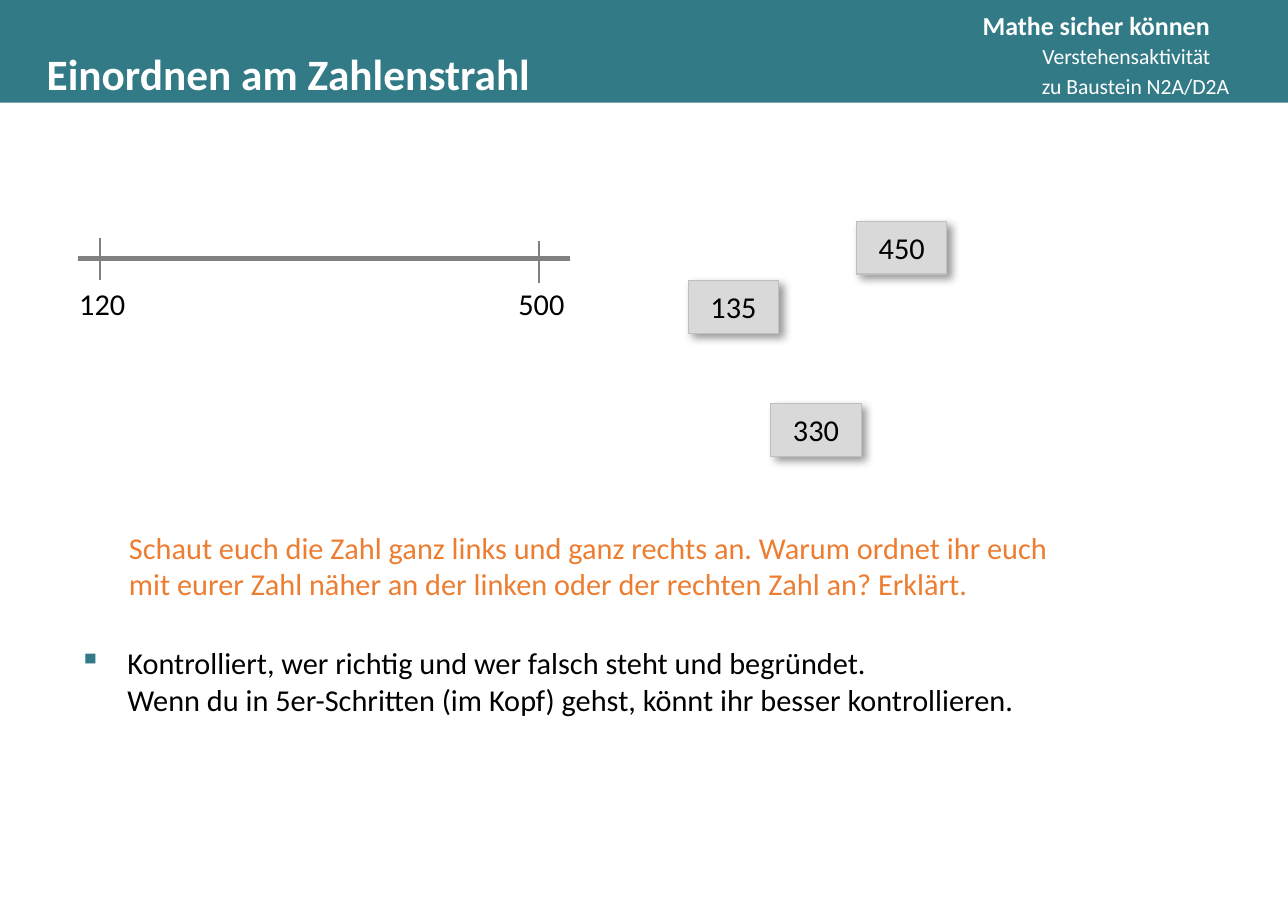
import copy
import dataclasses

import lxml.etree
import pptx
import pptx.dml.color
import pptx.enum.shapes
import pptx.enum.text
import pptx.oxml
import pptx.oxml.ns
import pptx.util

Inches = pptx.util.Inches
Pt = pptx.util.Pt
ALIGN = pptx.enum.text.PP_ALIGN
ANCHOR = pptx.enum.text.MSO_ANCHOR
qn = pptx.oxml.ns.qn


@dataclasses.dataclass(frozen=True)
class Theme:
    font: str = "Calibri"
    teal: str = "327A86"
    white: str = "FFFFFF"
    black: str = "000000"
    orange: str = "ED7D31"
    axis: str = "808080"
    card: str = "D9D9D9"
    card_edge: str = "BFBFBF"
    title: int = 20
    body: int = 14
    brand: int = 12
    small: int = 10


def rgb(value):
    return pptx.dml.color.RGBColor.from_string(value)


class SlideBuilder:
    def __init__(self, slide, theme):
        self.s = slide
        self.theme = theme

    def style(self, p, size, color, bold=False, align=ALIGN.LEFT):
        p.alignment = align
        for r in p.runs:
            r.font.name = self.theme.font
            r.font.size = Pt(size)
            r.font.bold = bold
            r.font.color.rgb = rgb(color)
        for br in p._p.findall(qn("a:br")):
            br.append(copy.deepcopy(p.runs[0]._r.rPr))

    def title(self, text, left, top, width, height):
        sp = self.s.shapes.title
        sp.left, sp.top = Inches(left), Inches(top)
        sp.width, sp.height = Inches(width), Inches(height)
        tf = sp.text_frame
        tf.text = text
        tf.auto_size = pptx.enum.text.MSO_AUTO_SIZE.NONE
        tf.vertical_anchor = ANCHOR.MIDDLE
        self.style(tf.paragraphs[0], self.theme.title, self.theme.white, True)

    def rect(self, left, top, width, height, fill):
        sp = self.s.shapes.add_shape(
            pptx.enum.shapes.MSO_SHAPE.RECTANGLE,
            Inches(left), Inches(top), Inches(width), Inches(height))
        sp.shadow.inherit = False
        sp.fill.solid()
        sp.fill.fore_color.rgb = rgb(fill)
        sp.line.fill.background()
        return sp

    def band(self, width, height):
        sp = self.rect(0, 0, width, height, self.theme.teal)
        self.s.shapes.title._element.addprevious(sp._element)

    def card(self, number, left, top):
        sp = self.rect(left, top, 0.58, 0.34, self.theme.card)
        sp.line.color.rgb = rgb(self.theme.card_edge)
        sp.line.width = Pt(0.5)
        effects = sp._element.spPr.find(qn("a:effectLst"))
        effects.append(pptx.oxml.parse_xml(
            f'<a:outerShdw {pptx.oxml.ns.nsdecls("a")} blurRad="{Pt(4)}" '
            f'dist="{Pt(3)}" dir="2700000" algn="tl" rotWithShape="0">'
            f'<a:srgbClr val="{self.theme.black}"><a:alpha val="40000"/>'
            '</a:srgbClr></a:outerShdw>'))
        p = sp.text_frame.paragraphs[0]
        p.text = number
        self.style(p, self.theme.body, self.theme.black, align=ALIGN.CENTER)

    def text(self, text, left, top, width, height, size, color,
             bold=False, align=ALIGN.LEFT):
        sp = self.s.shapes.add_textbox(
            Inches(left), Inches(top), Inches(width), Inches(height))
        tf = sp.text_frame
        tf.word_wrap = True
        p = tf.paragraphs[0]
        p.text = text
        self.style(p, size, color, bold, align)
        return tf

    def brand(self, name, subtitle, left, top, width, height):
        t = self.theme
        tf = self.text(name, left, top, width, height, t.brand, t.white,
                       True, ALIGN.RIGHT)
        tf.margin_left = tf.margin_right = Inches(0.02)
        tf.margin_top = tf.margin_bottom = Inches(0.02)
        p = tf.add_paragraph()
        p.text = subtitle
        self.style(p, t.small, t.white, align=ALIGN.RIGHT)
        for p in tf.paragraphs:
            p.line_spacing = 1.1

    def bullet(self, text, left, top, width, height):
        t = self.theme
        tf = self.text(text, left, top, width, height, t.body, t.black)
        pPr = tf.paragraphs[0]._p.get_or_add_pPr()
        pPr.set("marL", str(Inches(0.31)))
        pPr.set("indent", str(-Inches(0.31)))
        color = lxml.etree.SubElement(pPr, qn("a:buClr"))
        lxml.etree.SubElement(color, qn("a:srgbClr"), val=t.teal)
        lxml.etree.SubElement(pPr, qn("a:buChar"), char="▪")

    def line(self, x1, y1, x2, y2, width):
        sp = self.s.shapes.add_connector(
            pptx.enum.shapes.MSO_CONNECTOR.STRAIGHT,
            Inches(x1), Inches(y1), Inches(x2), Inches(y2))
        sp.line.color.rgb = rgb(self.theme.axis)
        sp.line.width = Pt(width)
        lxml.etree.SubElement(sp._element.spPr, qn("a:effectLst"))

    def number_line(self, left, right, y, ticks):
        self.line(left, y, right, y, 2.25)
        for label, x, top, label_left in ticks:
            self.line(x, top, x, top + 0.27, 1)
            self.text(label, label_left, y + 0.12, 0.51, 0.34,
                      self.theme.body, self.theme.black)


def main():
    prs = pptx.Presentation()
    prs.slide_width, prs.slide_height = Inches(8.27), Inches(5.85)
    theme = Theme()
    b = SlideBuilder(prs.slides.add_slide(prs.slide_layouts[5]), theme)

    b.band(8.27, 0.66)
    b.title("Einordnen am Zahlenstrahl", 0.2, 0.16, 5.29, 0.62)
    b.brand("Mathe sicher können", "Verstehensaktivität", 5.86, 0.02, 1.93, 0.26)
    b.text("zu Baustein N2A/D2A", 6.56, 0.42, 1.43, 0.27,
           theme.small, theme.white, align=ALIGN.RIGHT)

    b.number_line(0.5, 3.66, 1.66,
                  [("120", 0.64, 1.53, 0.41), ("500", 3.46, 1.55, 3.23)])
    for number, left, top in [("135", 4.42, 1.8), ("450", 5.5, 1.42),
                              ("330", 4.95, 2.59)]:
        b.card(number, left, top)

    b.text("Schaut euch die Zahl ganz links und ganz rechts an. Warum ordnet "
           "ihr euch mit eurer Zahl näher an der linken oder der rechten Zahl "
           "an? Erklärt.", 0.73, 3.35, 6.26, 0.57, theme.body, theme.orange)
    b.bullet("Kontrolliert, wer richtig und wer falsch steht und begründet.\n"
             "Wenn du in 5er-Schritten (im Kopf) gehst, könnt ihr besser "
             "kontrollieren.", 0.41, 4.09, 6.44, 0.57)

    prs.save("out.pptx")


if __name__ == "__main__":
    main()
